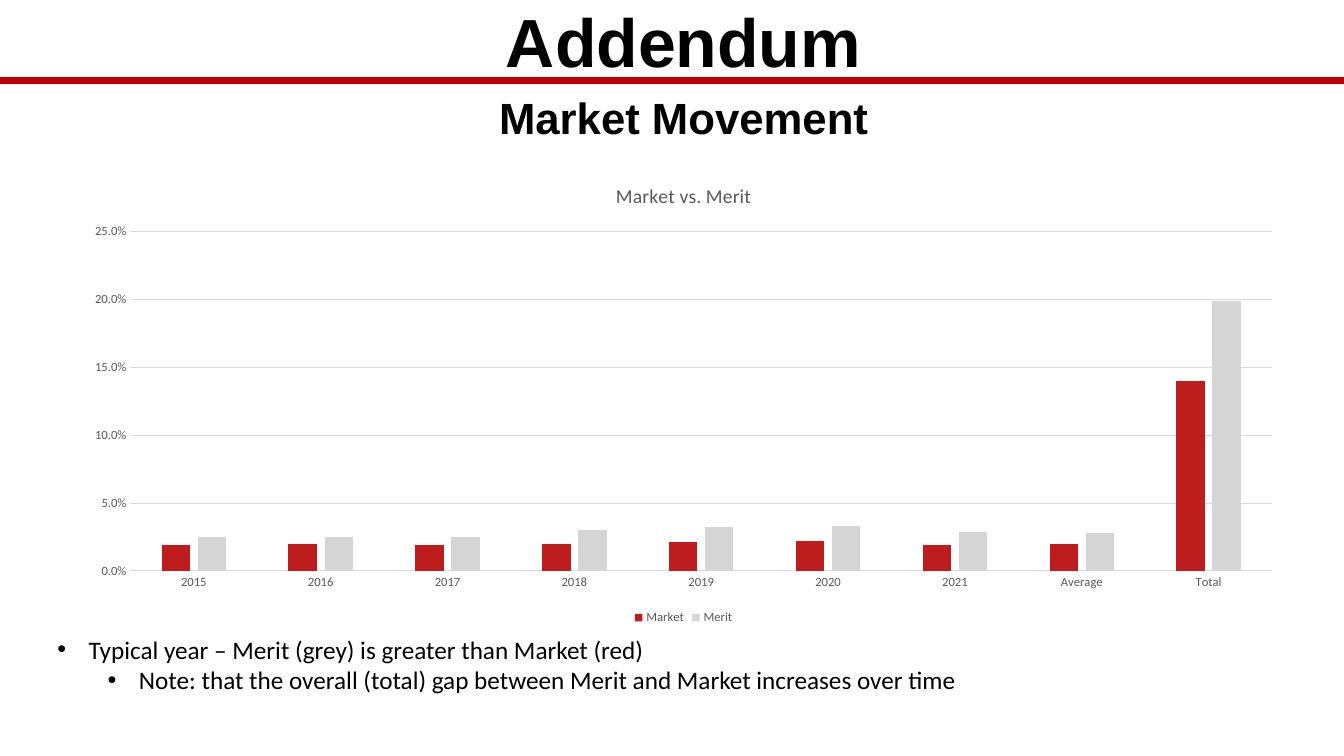
from lxml.etree import SubElement
from pptx import Presentation
from pptx.chart.data import CategoryChartData
from pptx.dml.color import RGBColor
from pptx.enum.chart import XL_CHART_TYPE, XL_LEGEND_POSITION, XL_TICK_MARK
from pptx.enum.shapes import MSO_CONNECTOR
from pptx.enum.text import MSO_ANCHOR, PP_ALIGN
from pptx.oxml.ns import qn
from pptx.util import Inches, Pt

BLACK = RGBColor(0, 0, 0)
RULE = RGBColor(0xC0, 0, 0)
RED = RGBColor(0xBE, 0x1D, 0x1D)
SILVER = RGBColor(0xD5, 0xD5, 0xD5)
GRID = RGBColor(0xD9, 0xD9, 0xD9)
GREY = RGBColor(0x59, 0x59, 0x59)

# text, top, size
HEADS = [("Addendum", 0.01, 48.6), ("Market Movement", 0.75, 31.2)]
# level, text
NOTES = [
    (0, "Typical year – Merit (grey) is greater than Market (red)"),
    (1, "Note: that the overall (total) gap between Merit and Market increases over time"),
]
TITLE = "Market vs. Merit"
CATS = [str(year) for year in range(2015, 2022)] + ["Average", "Total"]
SERIES = [
    ("Market", RED, [0.019, 0.02, 0.019, 0.02, 0.021, 0.022, 0.019, 0.02, 0.14]),
    ("Merit", SILVER, [0.025, 0.025, 0.025, 0.03, 0.032, 0.033, 0.029, 0.028, 0.199]),
]
WIDE, HIGH = 13.33, 7.5
RULE_Y = 0.8
HEAD_X, HEAD_H = 0.23, 0.88
CHART = (0.7, 1.63, 12.16, 4.61)
NOTE = (0.47, 6.24, 12.15, 0.71)
HANG, STEP = 0.31, 0.5


def style(font, size, color, name="Calibri", bold=False):
    font.size, font.name, font.bold = Pt(size), name, bold
    font.color.rgb = color


def add_box(slide, area):
    frame = slide.shapes.add_textbox(*map(Inches, area)).text_frame
    frame.word_wrap = True
    return frame


def add_rule(slide):
    y = Inches(RULE_Y)
    rule = slide.shapes.add_connector(MSO_CONNECTOR.STRAIGHT, 0, y, Inches(WIDE), y)
    rule.line.color.rgb = RULE
    rule.line.width = Pt(4.5)
    SubElement(rule._element.spPr, qn("a:effectLst"))


def add_head(slide, text, top, size):
    frame = add_box(slide, (HEAD_X, top, WIDE - HEAD_X, HEAD_H))
    frame.vertical_anchor = MSO_ANCHOR.MIDDLE
    para = frame.paragraphs[0]
    para.text = text
    para.alignment = PP_ALIGN.CENTER
    para.line_spacing = 0.9
    style(para.font, size, BLACK, "Arial", True)


def add_notes(slide):
    frame = add_box(slide, NOTE)
    for i, (level, text) in enumerate(NOTES):
        para = frame.add_paragraph() if i else frame.paragraphs[0]
        para.text, para.level = text, level
        style(para.font, 18, BLACK)
        props = para._p.get_or_add_pPr()
        props.set("marL", str(Inches(HANG + STEP * level)))
        props.set("indent", str(-Inches(HANG)))
        # bullet elements must come before the font defaults
        for j, (tag, key, value) in enumerate(
            [("a:buFont", "typeface", "Arial"), ("a:buChar", "char", "•")]
        ):
            mark = SubElement(props, qn(tag))
            mark.set(key, value)
            props.insert(j, mark)


def add_bars(slide):
    data = CategoryChartData(number_format="0.0%")
    data.categories = CATS
    for name, _, vals in SERIES:
        data.add_series(name, vals)
    chart = slide.shapes.add_chart(
        XL_CHART_TYPE.COLUMN_CLUSTERED, *map(Inches, CHART), data
    ).chart
    style(chart.font, 10, BLACK)

    chart.has_title = True
    para = chart.chart_title.text_frame.paragraphs[0]
    para.text = TITLE
    style(para.font, 14, GREY)
    chart.chart_title.include_in_layout = False

    chart.has_legend = True
    chart.legend.position = XL_LEGEND_POSITION.BOTTOM
    chart.legend.include_in_layout = False
    style(chart.legend.font, 9, GREY)

    plot = chart.plots[0]
    plot.gap_width, plot.overlap = 219, -27
    plot.vary_by_categories = False
    for bars, (_, color, _) in zip(plot.series, SERIES):
        bars.format.fill.solid()
        bars.format.fill.fore_color.rgb = color
        bars.invert_if_negative = False

    cat, val = chart.category_axis, chart.value_axis
    for axis in (cat, val):
        axis.major_tick_mark = axis.minor_tick_mark = XL_TICK_MARK.NONE
        style(axis.tick_labels.font, 9, GREY)
    for line in (cat.format.line, val.major_gridlines.format.line):
        line.color.rgb = GRID
        line.width = Pt(0.75)
    val.format.line.fill.background()
    val.minimum_scale, val.maximum_scale, val.major_unit = 0, 0.25, 0.05
    val.tick_labels.number_format = "0.0%"
    val.tick_labels.number_format_is_linked = False


def main():
    deck = Presentation()
    deck.slide_width, deck.slide_height = Inches(WIDE), Inches(HIGH)
    slide = deck.slides.add_slide(deck.slide_layouts[6])
    add_rule(slide)
    for head in HEADS:
        add_head(slide, *head)
    add_notes(slide)
    add_bars(slide)
    deck.save("out.pptx")


if __name__ == "__main__":
    main()
